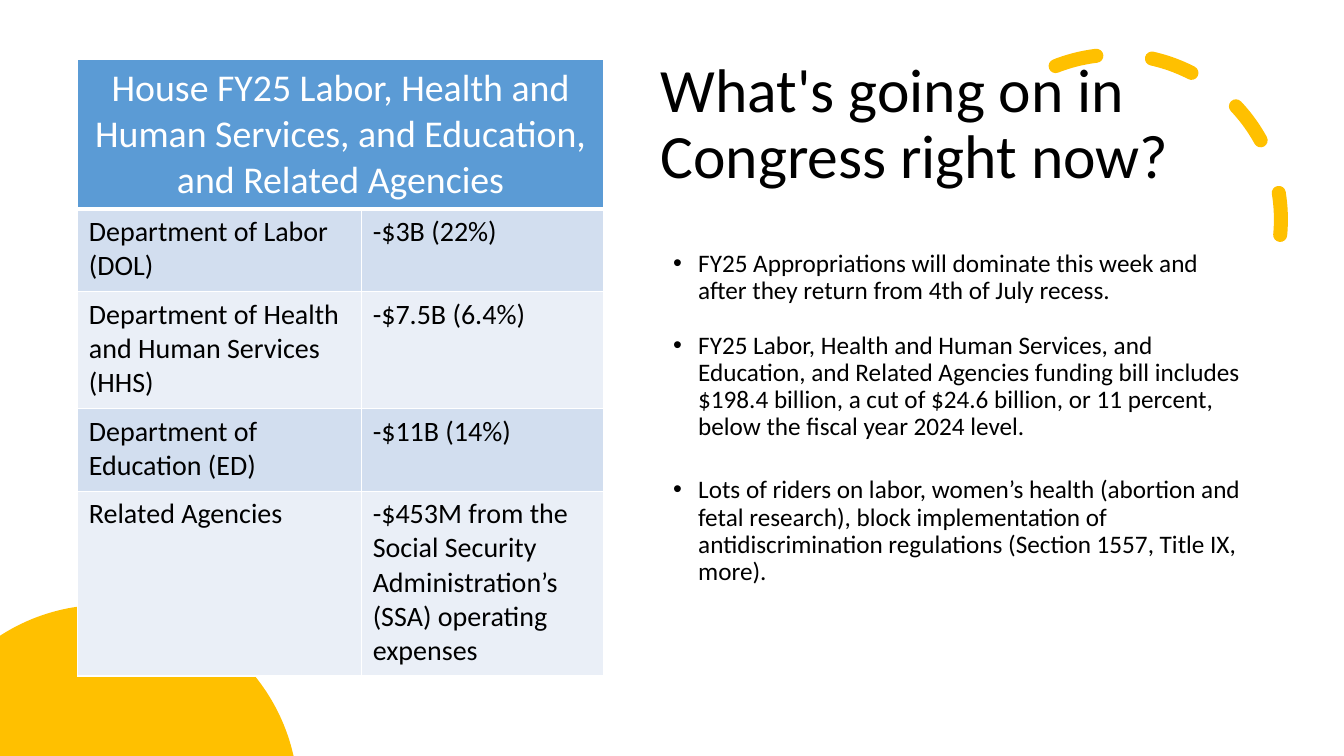
from math import acos, asin, cos, pi, sin

from lxml.etree import SubElement
from pptx import Presentation
from pptx.dml.color import RGBColor
from pptx.enum.dml import MSO_LINE
from pptx.enum.shapes import MSO_SHAPE
from pptx.enum.text import MSO_ANCHOR, MSO_AUTO_SIZE, PP_ALIGN
from pptx.oxml.ns import qn
from pptx.util import Pt

WHITE = RGBColor(0xFF, 0xFF, 0xFF)
BLACK = RGBColor(0x00, 0x00, 0x00)
GOLD = RGBColor(0xFF, 0xC0, 0x00)
HEADER_BLUE = RGBColor(0x5B, 0x9B, 0xD5)
BANDS = (RGBColor(0xD2, 0xDE, 0xEF), RGBColor(0xEA, 0xEF, 0xF7))
FONT = "Calibri"
SLIDE_WIDTH, SLIDE_HEIGHT = 960, 540

TITLE = "What's going on in Congress right now?"
# Each bullet with the space before it
BULLETS = [
    ("FY25 Appropriations will dominate this week and after they return "
     "from 4th of July recess.", 0),
    ("FY25 Labor, Health and Human Services, and Education, and Related "
     "Agencies funding bill includes $198.4 billion, a cut of $24.6 billion, "
     "or 11 percent, below the fiscal year 2024 level.", 19.5),
    ("Lots of riders on labor, women’s health (abortion and fetal research), "
     "block implementation of antidiscrimination regulations (Section 1557, "
     "Title IX, more).", 25.5),
]
TABLE_HEADER = ("House FY25 Labor, Health and Human Services, and Education, "
                "and Related Agencies")
CUTS = [
    ("Department of Labor (DOL)", "-$3B (22%)"),
    ("Department of Health and Human Services (HHS)", "-$7.5B (6.4%)"),
    ("Department of Education (ED)", "-$11B (14%)"),
    ("Related Agencies", "-$453M from the Social Security Administration’s "
                         "(SSA) operating expenses"),
]
COLUMN_SHARES = (0.54, 0.46)
ROW_HEIGHTS = (107, 59, 83.5, 59, 132)


def add_run(paragraph, text, size, color):
    run = paragraph.add_run()
    run.text = text
    run.font.name = FONT
    run.font.size = Pt(size)
    run.font.bold = False
    run.font.color.rgb = color


def place(shape, left, top, width, height):
    shape.left, shape.top = Pt(left), Pt(top)
    shape.width, shape.height = Pt(width), Pt(height)


def add_dashed_arc(slide, left, top, size):
    arc = slide.shapes.add_shape(
        MSO_SHAPE.ARC, Pt(left), Pt(top), Pt(size), Pt(size))
    arc.shadow.inherit = False
    arc.adjustments[0] = 144.42
    arc.adjustments[1] = 0
    arc.rotation = 66.1
    arc.fill.background()
    arc.line.color.rgb = GOLD
    arc.line.width = Pt(10)
    arc.line.dash_style = MSO_LINE.DASH
    properties = arc.element.spPr
    properties.find(qn("a:xfrm")).set("flipH", "1")
    properties.find(qn("a:ln")).set("cap", "rnd")
    # Send behind the title
    slide.shapes.element.insert(2, arc.element)


def add_corner_disc(slide, center_x, center_y, radius):
    # Circle cut off by the left and bottom slide edges
    start = pi + acos(center_x / radius)
    start = 2 * pi - acos(-center_x / radius)
    end = 2 * pi - asin((center_y - SLIDE_HEIGHT) / radius)
    steps = 90
    angles = [start + (end - start) * step / steps for step in range(steps + 1)]
    points = [(Pt(center_x + radius * cos(angle)),
               Pt(center_y + radius * sin(angle))) for angle in angles]
    builder = slide.shapes.build_freeform(0, Pt(SLIDE_HEIGHT))
    builder.add_line_segments(points, close=True)
    disc = builder.convert_to_shape()
    disc.shadow.inherit = False
    disc.fill.solid()
    disc.fill.fore_color.rgb = GOLD
    disc.line.fill.background()


def fill_title(title, left, top, width, height):
    place(title, left, top, width, height)
    frame = title.text_frame
    frame.auto_size = MSO_AUTO_SIZE.NONE
    frame.vertical_anchor = MSO_ANCHOR.MIDDLE
    paragraph = frame.paragraphs[0]
    paragraph.alignment = PP_ALIGN.LEFT
    paragraph.line_spacing = 0.9
    add_run(paragraph, TITLE, 44, BLACK)


def fill_bullets(body, left, top, width, height):
    place(body, left, top, width, height)
    frame = body.text_frame
    frame.auto_size = MSO_AUTO_SIZE.NONE
    frame.vertical_anchor = MSO_ANCHOR.TOP
    for index, (text, space_before) in enumerate(BULLETS):
        paragraph = frame.add_paragraph() if index else frame.paragraphs[0]
        paragraph.line_spacing = 0.9
        paragraph.space_before = Pt(space_before)
        paragraph.space_after = Pt(0)
        properties = paragraph._p.get_or_add_pPr()
        properties.set("marL", str(Pt(27)))
        properties.set("indent", str(Pt(-18)))
        SubElement(properties, qn("a:buFont"), typeface="Arial")
        SubElement(properties, qn("a:buChar"), char="•")
        add_run(paragraph, text, 18, BLACK)


def style_cell(cell, fill, bottom_border=1):
    cell.margin_left = cell.margin_right = Pt(8)
    cell.margin_top = cell.margin_bottom = Pt(4)
    properties = cell._tc.get_or_add_tcPr()
    for side in ("L", "R", "T", "B"):
        width = bottom_border if side == "B" else 1
        line = SubElement(properties, qn(f"a:ln{side}"), w=str(Pt(width)))
        solid = SubElement(line, qn("a:solidFill"))
        SubElement(solid, qn("a:srgbClr"), val=str(WHITE))
    cell.fill.solid()
    cell.fill.fore_color.rgb = fill


def add_cuts_table(slide, left, top, width):
    frame = slide.shapes.add_table(
        len(ROW_HEIGHTS), len(COLUMN_SHARES),
        Pt(left), Pt(top), Pt(width), Pt(sum(ROW_HEIGHTS)))
    table = frame.table
    table.first_row = table.horz_banding = False
    for column, share in zip(table.columns, COLUMN_SHARES):
        column.width = Pt(width * share)
    for row, height in zip(table.rows, ROW_HEIGHTS):
        row.height = Pt(height)

    # Header across both columns
    header = table.cell(0, 0)
    header.merge(table.cell(0, 1))
    for cell in table.rows[0].cells:
        style_cell(cell, HEADER_BLUE, bottom_border=3)
    paragraph = header.text_frame.paragraphs[0]
    paragraph.alignment = PP_ALIGN.CENTER
    add_run(paragraph, TABLE_HEADER, 27, WHITE)

    # Agencies and their cuts
    for row, texts in enumerate(CUTS):
        for column, text in enumerate(texts):
            cell = table.cell(row + 1, column)
            style_cell(cell, BANDS[row % 2])
            add_run(cell.text_frame.paragraphs[0], text, 20, BLACK)


def build_congress_slide(presentation):
    slide = presentation.slides.add_slide(presentation.slide_layouts[1])
    title, body = slide.placeholders
    add_dashed_arc(slide, 679.5, 39, 235.5)
    fill_title(title, 464.5, 37.5, 430, 104.5)
    add_corner_disc(slide, 75, 570, 138)
    fill_bullets(body, 464.5, 175.5, 430, 310)
    add_cuts_table(slide, 55.5, 42.5, 375.5)


def main():
    presentation = Presentation()
    presentation.slide_width = Pt(SLIDE_WIDTH)
    presentation.slide_height = Pt(SLIDE_HEIGHT)
    build_congress_slide(presentation)
    presentation.save("out.pptx")


if __name__ == "__main__":
    main()
